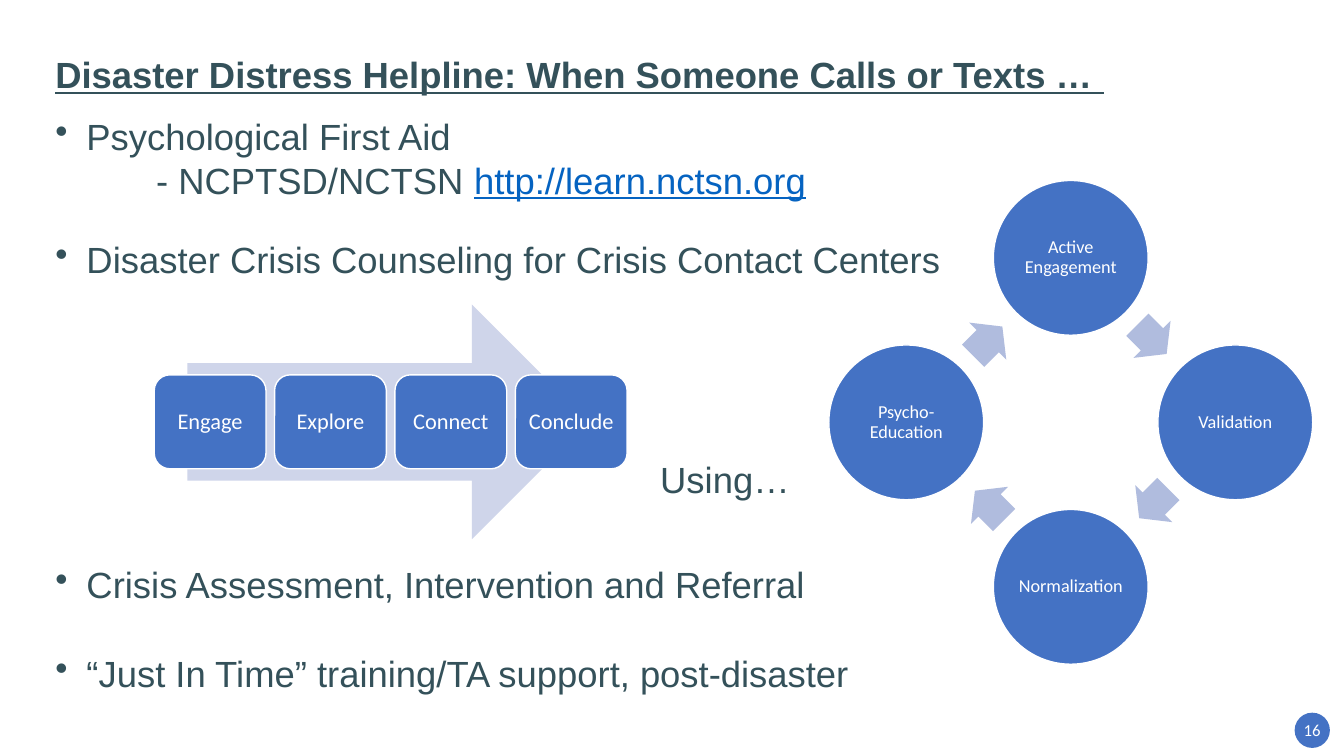
import math

from lxml import etree
from pptx import Presentation, util as u
from pptx.dml.color import RGBColor
from pptx.enum import shapes, text

INK, BLUE, WHITE, LINK = "34515A", "4472C4", "FFFFFF", "0563C1"
PALE_ARROW, CYCLE_ARROW = "CFD5EA", "B0BCDE"
SLIDE_W, SLIDE_H = 13.33, 7.5
STAGES = ["Engage", "Explore", "Connect", "Conclude"]
SKILLS = ["Active Engagement", "Validation", "Normalization", "Psycho-Education"]
TITLE = {"bold": True, "underline": True}
OUTLINE = [
    (0, 0, False, [("Disaster Distress Helpline: When Someone Calls or Texts … ", INK, TITLE)]),
    (13, 0.31, True, [("Psychological First Aid", INK, {})]),
    (0, 1, False, [("- NCPTSD/NCTSN ", INK, {}),
                   ("http://learn.nctsn.org", LINK, {"underline": True})]),
    (25.5, 0.31, True, [("Disaster Crisis Counseling for Crisis Contact Centers", INK, {})]),
    (126, 6, False, [("Using…", INK, {})]),
    (44, 0.31, True, [("Crisis Assessment, Intervention and Referral", INK, {})]),
    (32, 0.31, True, [("“Just In Time” training/TA support, post-disaster", INK, {})]),
]


def color(hex_value):
    """Turn a hex string into a colour."""
    return RGBColor.from_string(hex_value)


def apply(target, values):
    """Set each attribute named in values on the target."""
    for name, value in values.items():
        setattr(target, name, value)


def add_run(paragraph, words, hex_value, **values):
    """Add formatted words to a paragraph."""
    run = paragraph.add_run()
    run.text = words
    apply(run.font, values)
    run.font.color.rgb = color(hex_value)


def add_figure(slide, kind, box, fill, line=None):
    """Add a flat preset shape, with an outline if a line colour is given."""
    figure = slide.shapes.add_shape(kind, *[u.Inches(v) for v in box])
    figure.shadow.inherit = False
    figure.fill.solid()
    figure.fill.fore_color.rgb = color(fill)
    if line:
        figure.line.color.rgb = color(line)
        figure.line.width = u.Pt(1)
    else:
        figure.line.fill.background()
    return figure


def add_label(figure, words, size, inset, spacing=0.9):
    """Centre white words inside a shape."""
    frame = figure.text_frame
    margins = ("margin_left", "margin_top", "margin_right", "margin_bottom")
    apply(frame, dict.fromkeys(margins, u.Inches(inset)))
    apply(frame, {"word_wrap": True, "vertical_anchor": text.MSO_ANCHOR.MIDDLE})
    paragraph = frame.paragraphs[0]
    apply(paragraph, {"alignment": text.PP_ALIGN.CENTER, "line_spacing": spacing})
    add_run(paragraph, words, WHITE, name="Calibri", size=u.Pt(size))


def indent(paragraph, left, bulleted):
    """Indent a paragraph and give it a hanging bullet if asked."""
    props = paragraph._p.get_or_add_pPr()
    props.set("marL", str(u.Inches(left)))
    props.set("indent", str(-u.Inches(left) if bulleted else 0))
    space = props.nsmap["a"]
    bullet = etree.SubElement(props, f"{{{space}}}{'buChar' if bulleted else 'buNone'}")
    if bulleted:
        bullet.set("char", "•")


def outline(slide, box):
    """Write the heading and the bulleted points."""
    frame = slide.shapes.add_textbox(*[u.Inches(v) for v in box]).text_frame
    frame.word_wrap = True
    for number, (before, left, bulleted, runs) in enumerate(OUTLINE):
        point = frame.add_paragraph() if number else frame.paragraphs[0]
        indent(point, left, bulleted)
        point.space_before = u.Pt(before)
        for words, hue, values in runs:
            add_run(point, words, hue, name="Arial", size=u.Pt(26), **values)


def process(slide, box):
    """Lay the call stages in a row over a wide arrow."""
    left, top, width, height = box
    arrow_box = (left + 0.07 * width, top, 0.85 * width, height)
    add_figure(slide, shapes.MSO_SHAPE.RIGHT_ARROW, arrow_box, PALE_ARROW)
    gap = 0.085
    card = (width - gap * (len(STAGES) - 1)) / len(STAGES)
    for column, stage in enumerate(STAGES):
        place = (left + column * (card + gap), top + 0.3 * height, card, 0.4 * height)
        step = add_figure(slide, shapes.MSO_SHAPE.ROUNDED_RECTANGLE, place, BLUE, WHITE)
        add_label(step, stage, 16, 0.07)


def cycle(slide, box):
    """Place the skills on a ring with arrows running clockwise."""
    left, top, side, _ = box
    center_x, center_y = left + side / 2, top + side / 2
    disc = 0.32 * side
    arrow_w, arrow_h = 0.41, 0.52

    def around(degrees, radius, width, height):
        """Box of the given size centred on the ring."""
        angle = math.radians(degrees)
        return (center_x + radius * math.cos(angle) - width / 2,
                center_y + radius * math.sin(angle) - height / 2, width, height)

    for turn, skill in enumerate(SKILLS):
        place = around(90 * turn - 90, (side - disc) / 2, disc, disc)
        node = add_figure(slide, shapes.MSO_SHAPE.OVAL, place, BLUE, WHITE)
        add_label(node, skill, 13, 0.02)
        place = around(90 * turn - 45.6, 0.24 * side, arrow_w, arrow_h)
        arrow = add_figure(slide, shapes.MSO_SHAPE.RIGHT_ARROW, place, CYCLE_ARROW)
        arrow.adjustments[0], arrow.adjustments[1] = 0.6, 0.5
        arrow.rotation = 45 + 90 * turn


def page_number(slide, box):
    """Show the page number in a disc."""
    badge = add_figure(slide, shapes.MSO_SHAPE.OVAL, box, BLUE)
    add_label(badge, "16", 12, 0, 1.0)


def main():
    """Build and save the slide."""
    deck = Presentation()
    apply(deck, {"slide_width": u.Inches(SLIDE_W), "slide_height": u.Inches(SLIDE_H)})
    slide = deck.slides.add_slide(deck.slide_layouts[6])
    page_number(slide, (12.84, 7.07, 0.35, 0.35))
    outline(slide, (0.45, 0.47, 10.67, 6.7))
    process(slide, (1.53, 3.02, 4.69, 2.33))
    cycle(slide, (8.22, 1.79, 4.8, 4.8))
    deck.save("out.pptx")


if __name__ == "__main__":
    main()
